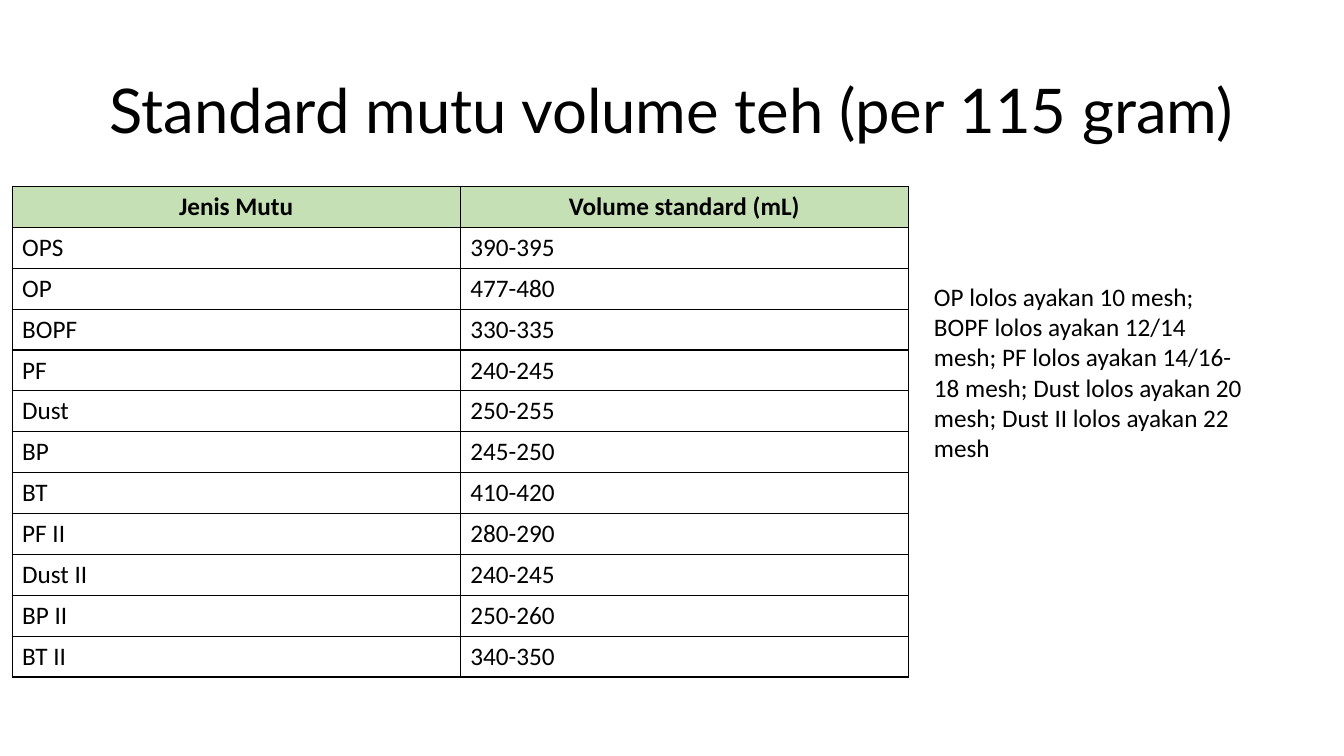
from dataclasses import dataclass

from lxml import etree
from pptx import Presentation
from pptx import util as u
from pptx.dml.color import RGBColor
from pptx.enum import text
from pptx.oxml import ns

COLORS = {"ink": "000000", "header": "C5E0B4"}
SLIDE_W, SLIDE_H = u.Inches(13.33), u.Inches(7.5)
GRID_COLS, GRID_ROWS = 160, 90
BODY_FONT, TITLE_FONT = "Calibri", "Lato"
BODY_SIZE, TITLE_SIZE = 18, 44


@dataclass(frozen=True)
class Box:
    col: float
    row: float
    cols: float
    rows: float

    def emu(self) -> tuple[int, int, int, int]:
        return (
            round(self.col * SLIDE_W / GRID_COLS),
            round(self.row * SLIDE_H / GRID_ROWS),
            round(self.cols * SLIDE_W / GRID_COLS),
            round(self.rows * SLIDE_H / GRID_ROWS),
        )


@dataclass(frozen=True)
class Grade:
    name: str
    volume: str


TITLE_BOX = Box(11, 4.8, 138, 17.4)
TABLE_BOX = Box(1.44, 22.2, 106.7, 58.44)
NOTE_BOX = Box(110, 32.9, 40.2, 19.4)

TITLE = "Standard mutu volume teh (per 115 gram)"
NOTE = (
    "OP lolos ayakan 10 mesh; BOPF lolos ayakan 12/14 mesh; "
    "PF lolos ayakan 14/16-18 mesh; Dust lolos ayakan 20 mesh; "
    "Dust II lolos ayakan 22 mesh"
)
HEADER = Grade("Jenis Mutu", "Volume standard (mL)")
GRADES = [
    Grade("OPS", "390-395"),
    Grade("OP", "477-480"),
    Grade("BOPF", "330-335"),
    Grade("PF", "240-245"),
    Grade("Dust", "250-255"),
    Grade("BP", "245-250"),
    Grade("BT", "410-420"),
    Grade("PF II", "280-290"),
    Grade("Dust II", "240-245"),
    Grade("BP II", "250-260"),
    Grade("BT II", "340-350"),
]


def write(tf, content: str, font: str = BODY_FONT, size: float = BODY_SIZE,
          bold: bool = False, centered: bool = False):
    tf.text = content
    p = tf.paragraphs[0]
    p.alignment = text.PP_ALIGN.CENTER if centered else text.PP_ALIGN.LEFT
    p.font.name = font
    p.font.size = u.Pt(size)
    p.font.bold = bold
    p.font.color.rgb = RGBColor.from_string(COLORS["ink"])
    return p


def add_borders(cell) -> None:
    tc_pr = cell._tc.get_or_add_tcPr()
    for side in ("lnL", "lnR", "lnT", "lnB"):
        ln = etree.SubElement(tc_pr, ns.qn(f"a:{side}"), w=str(u.Pt(1)))
        fill = etree.SubElement(ln, ns.qn("a:solidFill"))
        etree.SubElement(fill, ns.qn("a:srgbClr"), val=COLORS["ink"])


def add_title(s) -> None:
    sp = s.shapes.title
    sp.left, sp.top, sp.width, sp.height = TITLE_BOX.emu()
    tf = sp.text_frame
    tf.word_wrap = True
    tf.auto_size = text.MSO_AUTO_SIZE.NONE
    tf.vertical_anchor = text.MSO_ANCHOR.MIDDLE
    p = write(tf, TITLE, TITLE_FONT, TITLE_SIZE, centered=True)
    p.line_spacing = 0.9


def add_grade_table(s) -> None:
    records = [HEADER, *GRADES]
    table = s.shapes.add_table(len(records), 2, *TABLE_BOX.emu()).table
    table.first_row = table.horz_banding = False
    for i, grade in enumerate(records):
        is_header = i == 0
        for j, content in enumerate((grade.name, grade.volume)):
            cell = table.cell(i, j)
            write(cell.text_frame, content, bold=is_header, centered=is_header)
            add_borders(cell)
            if is_header:
                cell.fill.solid()
                cell.fill.fore_color.rgb = RGBColor.from_string(COLORS["header"])
            else:
                cell.fill.background()


def add_note(s) -> None:
    tf = s.shapes.add_textbox(*NOTE_BOX.emu()).text_frame
    tf.word_wrap = True
    tf.auto_size = text.MSO_AUTO_SIZE.SHAPE_TO_FIT_TEXT
    write(tf, NOTE)


def main() -> None:
    prs = Presentation()
    prs.slide_width, prs.slide_height = SLIDE_W, SLIDE_H
    s = prs.slides.add_slide(prs.slide_layouts.get_by_name("Title Only"))
    add_title(s)
    add_grade_table(s)
    add_note(s)
    prs.save("out.pptx")


if __name__ == "__main__":
    main()
